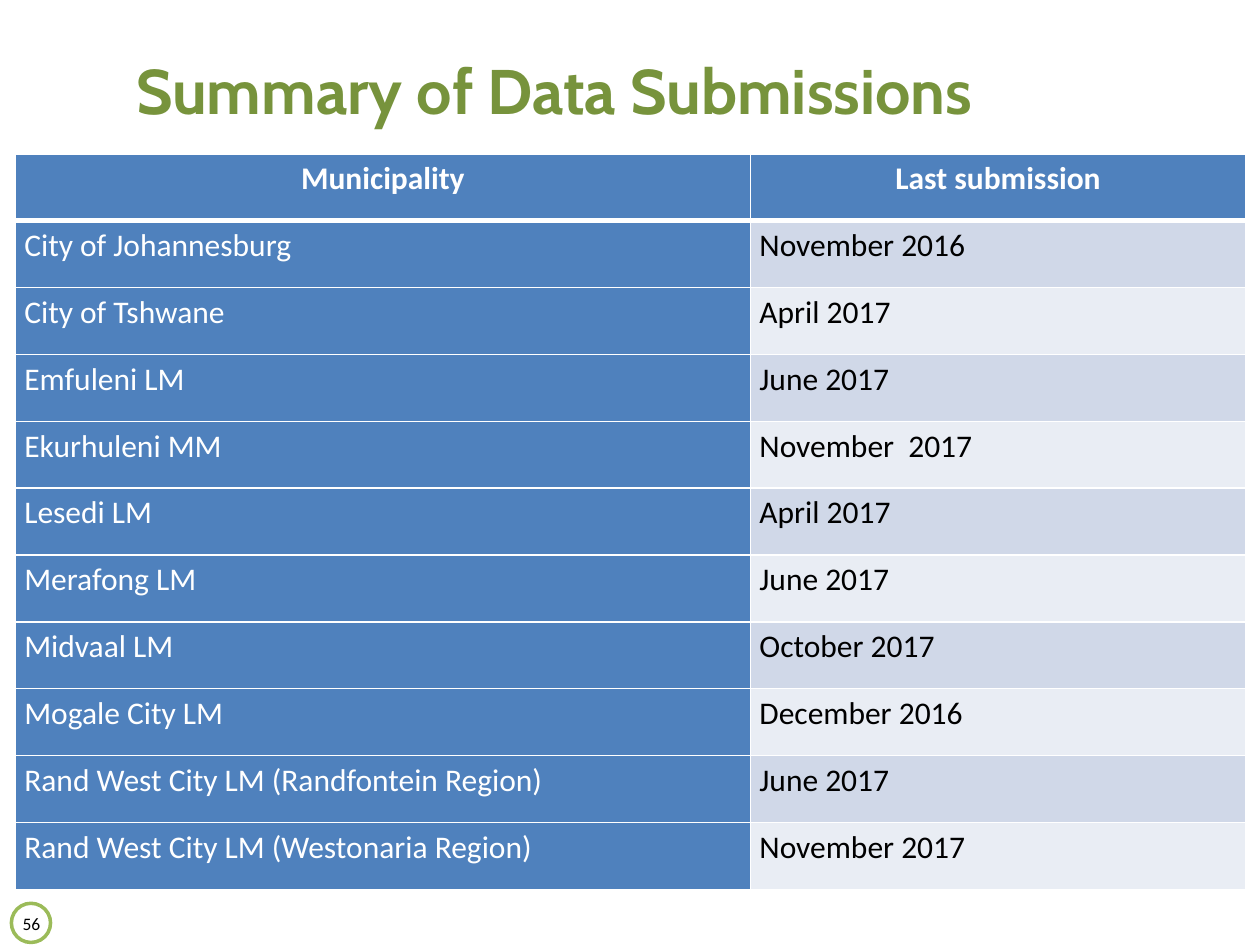
"""Build the slide that sums up the last data submission of each municipality."""
import pptx
import pptx.dml.color
import pptx.enum.shapes
import pptx.enum.text
import pptx.oxml
import pptx.oxml.ns
import pptx.util
from pptx.util import Cm

ALIGN = pptx.enum.text.PP_ALIGN
ANCHOR = pptx.enum.text.MSO_ANCHOR


def hue(code):
    """Turn a hex string into a colour."""
    return pptx.dml.color.RGBColor.from_string(code)


def write(frame, text, size=18, face="Calibri", color="000000", bold=False,
          align=ALIGN.LEFT, space=1.0):
    """Put one formatted paragraph into a text frame."""
    para = frame.paragraphs[0]
    para.alignment = align
    para.line_spacing = space
    run = para.add_run()
    run.text = text
    run.font.size = pptx.util.Pt(size)
    run.font.name = face
    run.font.bold = bold
    run.font.color.rgb = hue(color)


deck = pptx.Presentation()
deck.slide_width, deck.slide_height = Cm(25.4), Cm(19.05)
slide = deck.slides.add_slide(deck.slide_layouts[5])
shapes = slide.shapes

ring = shapes.add_shape(pptx.enum.shapes.MSO_SHAPE.OVAL,
                        Cm(0.23), Cm(18.21), Cm(0.79), Cm(0.79))
ring.shadow.inherit = False
ring.fill.solid()
ring.fill.fore_color.rgb = hue("FFFFFF")
ring.line.color.rgb = hue("9BBB59")
ring.line.width = pptx.util.Pt(2)

number = shapes.add_textbox(Cm(0.23), Cm(18.29), Cm(0.81), Cm(0.51)).text_frame
number.word_wrap = True
number.margin_left = number.margin_right = 0
write(number, "56", size=10, align=ALIGN.CENTER)

title = shapes.title
title.left, title.top, title.width, title.height = Cm(2.49), Cm(0.51), Cm(22.91), Cm(1.8)
title.text_frame.auto_size = pptx.enum.text.MSO_AUTO_SIZE.NONE
title.text_frame.vertical_anchor = ANCHOR.MIDDLE
write(title.text_frame, "Summary of Data Submissions", size=36, face="Cabin",
      color="77933C", bold=True, space=1.5)

rows = [
    ("Municipality", "Last submission"),
    ("City of Johannesburg", "November 2016"),
    ("City of Tshwane", "April 2017"),
    ("Emfuleni LM", "June 2017"),
    ("Ekurhuleni MM", "November  2017"),
    ("Lesedi LM", "April 2017"),
    ("Merafong LM", "June 2017"),
    ("Midvaal LM", "October 2017"),
    ("Mogale City LM", "December 2016"),
    ("Rand West City LM (Randfontein Region)", "June 2017"),
    ("Rand West City LM (Westonaria Region)", "November 2017"),
]
table = shapes.add_table(len(rows), 2, Cm(0.31), Cm(3.1), Cm(24.8), Cm(14.83)).table
table.columns[0].width, table.columns[1].width = Cm(14.82), Cm(9.98)

for i, row in enumerate(rows):
    table.rows[i].height = Cm(14.83 / len(rows))
    for j, text in enumerate(row):
        cell = table.cell(i, j)
        cell.margin_left = cell.margin_right = Cm(0.18)
        cell.margin_top = cell.margin_bottom = 0
        cell.vertical_anchor = ANCHOR.TOP
        for side in "LRTB":
            thick = (i, side) in [(0, "B"), (1, "T")]
            width = pptx.util.Pt(3 if thick else 1)
            cell._tc.get_or_add_tcPr().append(pptx.oxml.parse_xml(
                f'<a:ln{side} {pptx.oxml.ns.nsdecls("a")} w="{width}"><a:solidFill>'
                f'<a:srgbClr val="FFFFFF"/></a:solidFill></a:ln{side}>'))
        head = i == 0
        blue = head or j == 0
        band = "D0D8E8" if i % 2 else "E9EDF4"
        cell.fill.solid()
        cell.fill.fore_color.rgb = hue("4F81BD" if blue else band)
        write(cell.text_frame, text, color="FFFFFF" if blue else "000000", bold=head,
              align=ALIGN.CENTER if head else ALIGN.LEFT, space=1.15)

deck.save("out.pptx")
